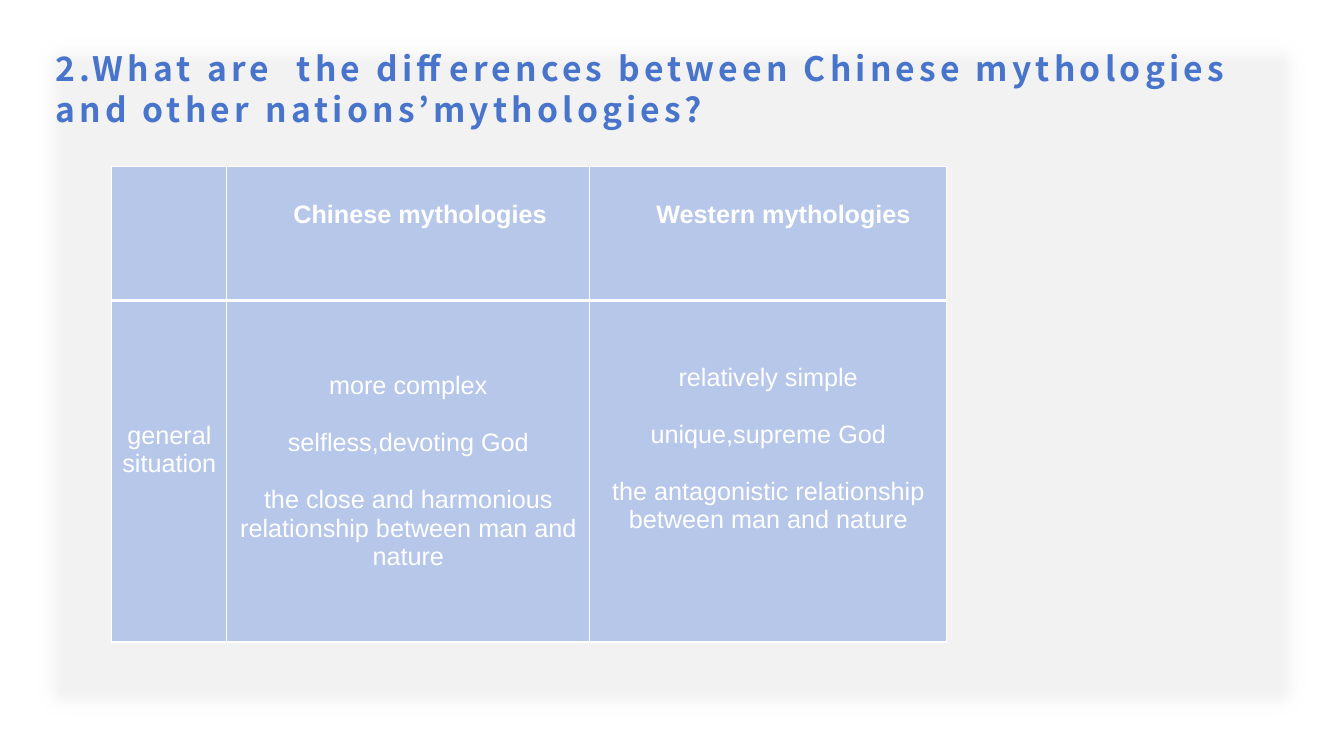
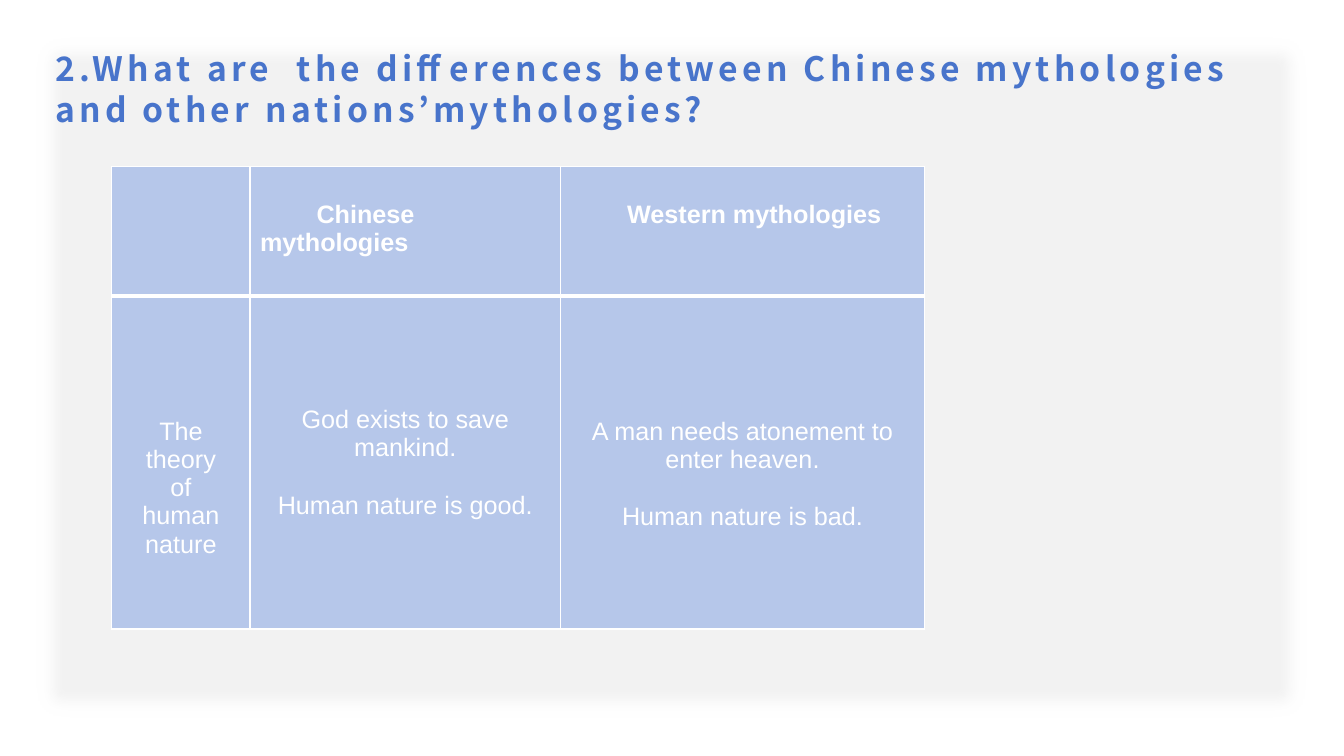
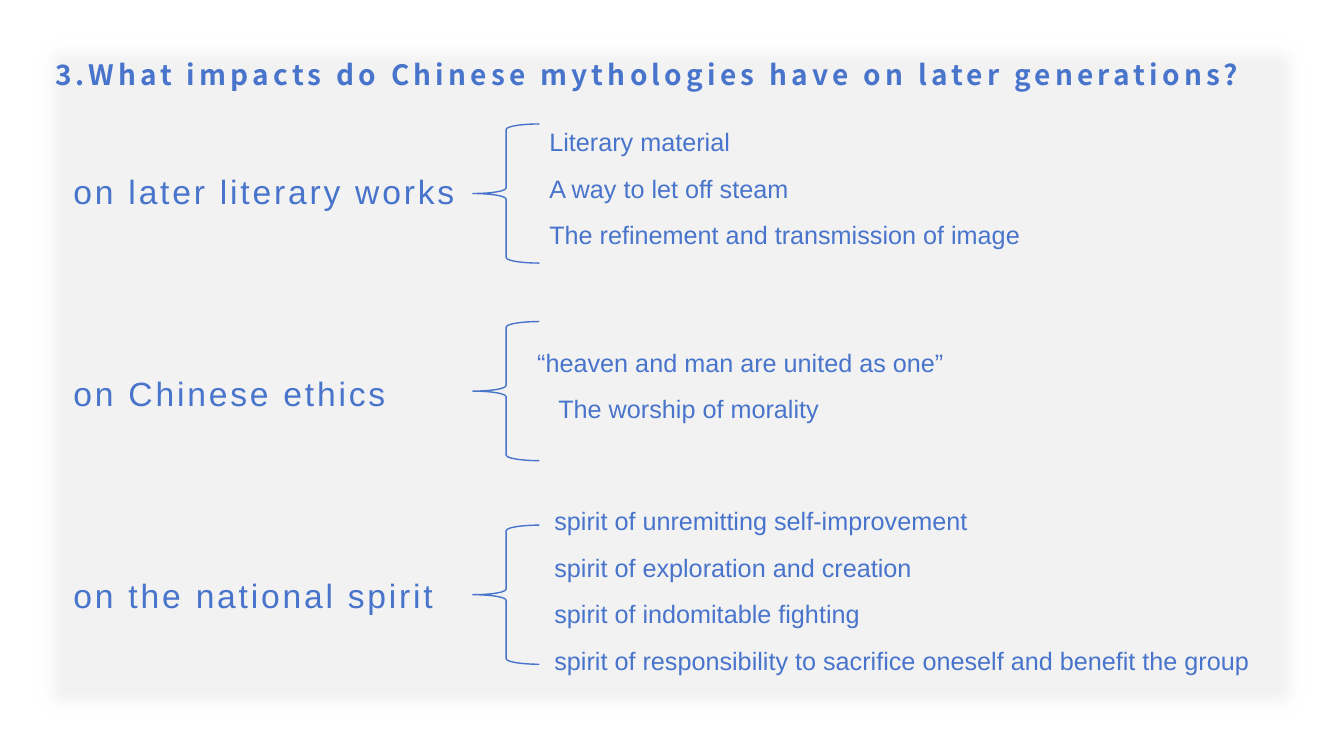
"""Builds three slides on Chinese mythologies: two comparison tables and a brace overview."""
from lxml.etree import SubElement
from pptx import Presentation
from pptx.dml.color import RGBColor
from pptx.enum.shapes import MSO_SHAPE as Preset
from pptx.enum.text import MSO_ANCHOR as Anchor, PP_ALIGN as Align
from pptx.oxml.ns import qn
from pptx.util import Inches, Pt

COLORS = {"panel": "F2F2F2", "accent": "4874CB", "cell": "B6C7EA", "white": "FFFFFF"}
BODY_FONT, TITLE_FONT = "Arial", "Noto Sans CJK JP"
BODY_SIZE, LABEL_SIZE = 18, 24
LINE_POINTS = 20.7
LINE = LINE_POINTS / 72
LIST_PITCH = 16.7
HEADER_INDENT = 0.56
TITLE_LEFT, TITLE_WIDTH, TITLE_HEIGHT = 0.45, 12.3, 0.92

DIFFERENCES = "2.What are  the differences between Chinese mythologies and other nations’mythologies?"
IMPACTS = "3.What impacts do Chinese mythologies have on later generations?"
HEADERS = ["", "Chinese mythologies", "Western mythologies"]

TABLES = [
    {
        "columns": [1.14, 3.6, 3.54],
        "rows": [1.33, 3.39],
        "body": [
            {"lines": ["general", "situation"], "drop": 4, "gap": 0},
            {"lines": ["more complex", "selfless,devoting God",
                       "the close and harmonious relationship between man and nature"]},
            {"lines": ["relatively simple", "unique,supreme God",
                       "the antagonistic relationship between man and nature"], "drop": 2},
        ],
    },
    {
        "columns": [1.37, 3.08, 3.61],
        "rows": [1.29, 3.3],
        "body": [
            {"lines": ["The theory", "of", "human nature"], "drop": 4, "gap": 0},
            {"lines": ["God exists to save mankind.", "Human nature is good."]},
            {"lines": ["A man needs atonement to enter heaven.", "Human nature is bad."], "drop": 4},
        ],
    },
]

SECTIONS = [
    {"label": "on later literary works", "brace": 1.23, "box": (5.35, 1.27, 5.81, 1.2),
     "items": [("Literary material", 0), ("A way to let off steam", 0),
               ("The refinement and transmission of image", 0)]},
    {"label": "on Chinese ethics", "brace": 3.19, "box": (5.23, 3.46, 4.44, 0.8),
     "items": [("“heaven and man are united as one”", 0), ("The worship of morality", 0.21)]},
    {"label": "on the national spirit", "brace": 5.21, "box": (5.4, 5.03, 7.7, 1.74),
     "items": [("spirit of unremitting self-improvement", 0),
               ("spirit of exploration and creation", 0),
               ("spirit of indomitable fighting", 0),
               ("spirit of responsibility to sacrifice oneself and benefit the group", 0)]},
]


def inches(values):
    return [Inches(value) for value in values]


def color(name):
    return RGBColor.from_string(COLORS[name])


def add_run(paragraph, text, size, color_name, font=BODY_FONT, bold=False, tracking=0):
    run = paragraph.add_run()
    run.text = text
    run.font.name, run.font.size, run.font.bold = font, Pt(size), bold
    run.font.color.rgb = color(color_name)
    if tracking:
        run._r.get_or_add_rPr().set("spc", str(tracking * 100))


def add_text_box(slide, box, anchor=Anchor.TOP):
    frame = slide.shapes.add_textbox(*inches(box)).text_frame
    frame.word_wrap = True
    frame.vertical_anchor = anchor
    return frame


def next_paragraph(frame, index):
    return frame.add_paragraph() if index else frame.paragraphs[0]


def add_panel(slide, layout):
    panel = slide.shapes.add_shape(Preset.RECTANGLE, *inches((0.32, 0.33, 12.69, 6.84)))
    panel.fill.solid()
    panel.fill.fore_color.rgb = color("panel")
    panel.line.fill.background()
    panel.shadow.inherit = False
    effects = panel._element.spPr.find(qn("a:effectLst"))
    SubElement(effects, qn("a:softEdge"), rad=str(Pt(12.7)))
    layout.shapes.element.append(panel._element)


def add_title(slide, text, size, top):
    frame = add_text_box(slide, (TITLE_LEFT, top, TITLE_WIDTH, TITLE_HEIGHT), Anchor.BOTTOM)
    paragraph = frame.paragraphs[0]
    paragraph.line_spacing = Pt(size * 1.22)
    add_run(paragraph, text, size, "accent", TITLE_FONT, bold=True, tracking=3)


def set_borders(cell, widths):
    properties = cell._tc.get_or_add_tcPr()
    for position, (side, width) in enumerate(zip("LRTB", widths)):
        line = SubElement(properties, qn(f"a:ln{side}"), w=str(Pt(width)))
        fill = SubElement(line, qn("a:solidFill"))
        SubElement(fill, qn("a:srgbClr"), val=COLORS["white"])
        properties.insert(position, line)


def style_cell(cell, widths):
    cell.fill.solid()
    cell.fill.fore_color.rgb = color("cell")
    set_borders(cell, widths)


def fill_header(cell, text):
    style_cell(cell, (1, 1, 1, 3))
    if text:
        cell.margin_top = Inches(0.05 + LINE)
        paragraph = cell.text_frame.paragraphs[0]
        paragraph._p.get_or_add_pPr().set("indent", str(Inches(HEADER_INDENT)))
        add_run(paragraph, text, BODY_SIZE, "white", bold=True)


def fill_body(cell, lines, drop=None, gap=LINE_POINTS):
    style_cell(cell, (1, 1, 3, 1))
    if drop is None:
        cell.vertical_anchor = Anchor.MIDDLE
    else:
        cell.margin_top = Inches(0.05 + drop * LINE)
    for index, text in enumerate(lines):
        paragraph = next_paragraph(cell.text_frame, index)
        paragraph.alignment = Align.CENTER
        if index:
            paragraph.space_before = Pt(gap)
        add_run(paragraph, text, BODY_SIZE, "white")


def add_comparison(slide, columns, rows, body):
    box = (1.11, 1.65, sum(columns), sum(rows))
    table = slide.shapes.add_table(len(rows), len(columns), *inches(box)).table
    for row, height in zip(table.rows, rows):
        row.height = Inches(height)
    for index, width in enumerate(columns):
        table.columns[index].width = Inches(width)
        fill_header(table.cell(0, index), HEADERS[index])
        fill_body(table.cell(1, index), **body[index])


def add_section(slide, index, label, brace, box, items):
    label_frame = add_text_box(slide, (0.63, 1.65 + 2 * index, 4.08, 0.5))
    add_run(label_frame.paragraphs[0], label, LABEL_SIZE, "accent", tracking=2)
    shape = slide.shapes.add_shape(Preset.LEFT_BRACE, *inches((4.69, brace, 0.66, 1.38)))
    shape.fill.background()
    shape.line.color.rgb = color("accent")
    shape.line.width = Pt(1)
    shape.shadow.inherit = False
    frame = add_text_box(slide, box)
    for position, (text, indent) in enumerate(items):
        paragraph = next_paragraph(frame, position)
        paragraph.line_spacing = Pt(LIST_PITCH)
        if position:
            paragraph.space_before = Pt(LIST_PITCH)
        if indent:
            paragraph._p.get_or_add_pPr().set("marL", str(Inches(indent)))
        add_run(paragraph, text, BODY_SIZE, "accent")


def main():
    presentation = Presentation()
    presentation.slide_width, presentation.slide_height = inches((13.33, 7.5))
    layout = presentation.slide_layouts[6]
    slides = [presentation.slides.add_slide(layout) for _ in range(3)]
    add_panel(slides[0], layout)
    for slide, content in zip(slides, TABLES):
        add_title(slide, DIFFERENCES, 24, 0.41)
        add_comparison(slide, **content)
    add_title(slides[2], IMPACTS, 20, 0.03)
    for index, section in enumerate(SECTIONS):
        add_section(slides[2], index, **section)
    presentation.save("out.pptx")


if __name__ == "__main__":
    main()
